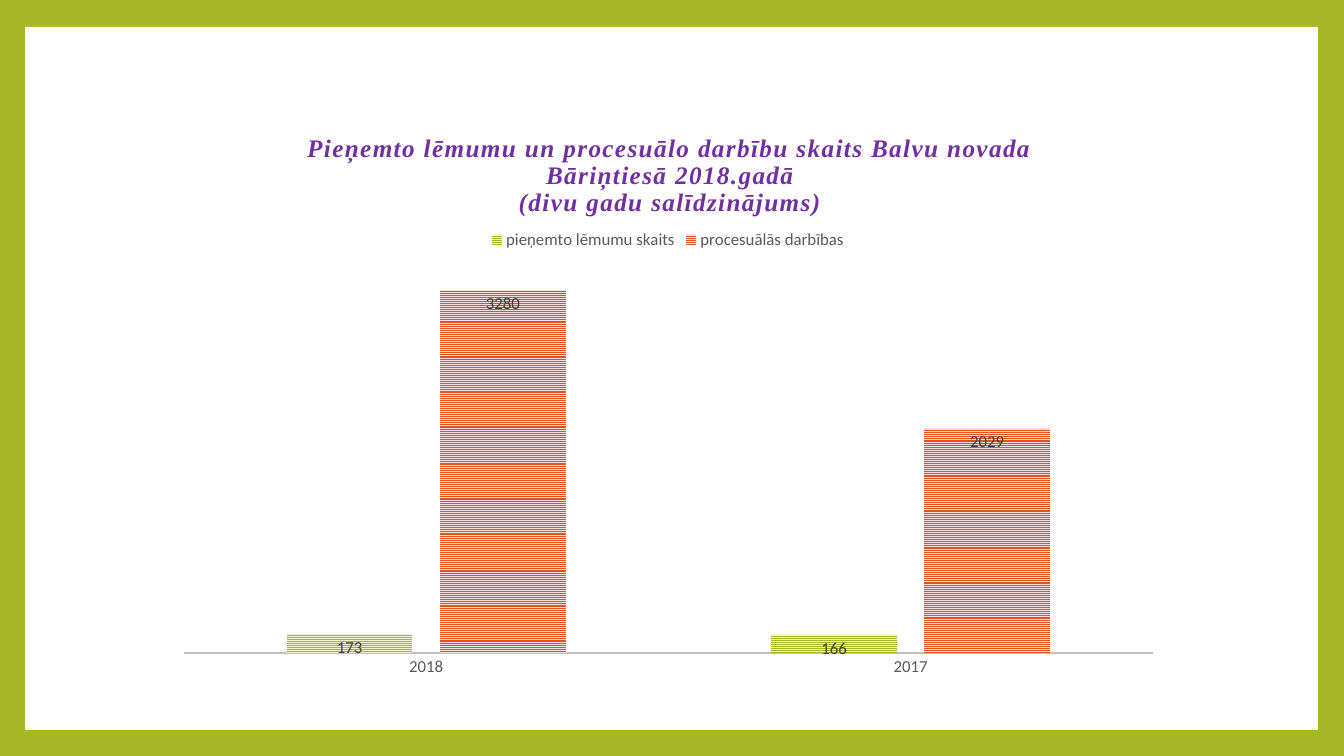
from dataclasses import dataclass

from lxml import etree
from pptx import Presentation
from pptx import util as u
from pptx.chart.chart import Chart
from pptx.chart.data import CategoryChartData
from pptx.dml.color import RGBColor
from pptx.enum import chart as ch, dml, shapes
from pptx.oxml.ns import qn
from pptx.text.text import Font

PX = 9080  # EMU per px


@dataclass(frozen=True)
class Theme:
    green: str = "A6B727"
    white: str = "FFFFFF"
    purple: str = "7030A0"
    axis: str = "BFBFBF"
    grey: str = "595959"
    label: str = "404040"
    body_font: str = "Calibri"
    title_font: str = "Times New Roman"
    body_pt: int = 12
    title_pt: int = 18


@dataclass(frozen=True)
class Box:
    left: int
    top: int
    width: int
    height: int

    def emu(self) -> tuple[int, ...]:
        return tuple(v * PX for v in (self.left, self.top, self.width, self.height))


@dataclass(frozen=True)
class Bars:
    name: str
    values: tuple[int, ...]
    fore: str
    back: str


THEME = Theme()
SLIDE = Box(0, 0, 1343, 755)
PANEL = Box(25, 27, 1292, 702)
CHART = Box(164, 108, 1007, 579)
TITLE = Box(304, 130, 764, 82)
LEGEND = Box(486, 228, 363, 22)
PLOT = Box(184, 265, 968, 387)
YEARS = ("2018", "2017")
TITLE_LINES = (
    "Pieņemto lēmumu un procesuālo darbību skaits Balvu novada Bāriņtiesā 2018.gadā",
    "(divu gadu salīdzinājums)",
)
SERIES = (
    Bars("pieņemto lēmumu skaits", (173, 166), THEME.green, "F0F5D0"),
    Bars("procesuālās darbības", (3280, 2029), "DF5327", "F9DDD4"),
)


def rgb(value: str) -> RGBColor:
    return RGBColor.from_string(value)


def style(font: Font, color: str, name: str = THEME.body_font,
          size: int = THEME.body_pt, strong: bool = False) -> None:
    font.name, font.size = name, u.Pt(size)
    font.bold = font.italic = strong
    font.color.rgb = rgb(color)


def place(element: etree._Element, box: Box, inner: bool = False, sized: bool = True) -> None:
    """Fix a chart part at a slide position, as fractions of the chart."""
    layout = element.find(qn("c:layout"))
    if layout is None:
        layout = etree.Element(qn("c:layout"))
        before = [e for e in element if e.tag in (qn("c:tx"), qn("c:legendPos"))]
        element.insert(len(before), layout)
    for child in list(layout):
        layout.remove(child)
    manual = etree.SubElement(layout, qn("c:manualLayout"))
    settings = {"layoutTarget": "inner"} if inner else {}
    settings |= {"xMode": "edge", "yMode": "edge",
                 "x": (box.left - CHART.left) / CHART.width,
                 "y": (box.top - CHART.top) / CHART.height}
    if sized:
        settings |= {"w": box.width / CHART.width, "h": box.height / CHART.height}
    for tag, value in settings.items():
        text = value if isinstance(value, str) else f"{value:.4f}"
        etree.SubElement(manual, qn(f"c:{tag}")).set("val", text)


def add_title(chart: Chart) -> None:
    title = chart.chart_title
    tf = title.text_frame
    for i, line in enumerate(TITLE_LINES):
        p = tf.paragraphs[0] if i == 0 else tf.add_paragraph()
        p.add_run().text = line
        style(p.font, THEME.purple, THEME.title_font, THEME.title_pt, strong=True)
        p._p.pPr.find(qn("a:defRPr")).set("spc", "100")
    title.include_in_layout = False
    place(title._element, TITLE, sized=False)


def style_axes(chart: Chart) -> None:
    years, counts = chart.category_axis, chart.value_axis
    years.major_tick_mark = years.minor_tick_mark = ch.XL_TICK_MARK.NONE
    years.format.line.color.rgb = rgb(THEME.axis)
    years.format.line.width = u.Pt(1.5)
    style(years.tick_labels.font, THEME.grey)
    counts.minimum_scale, counts.maximum_scale = 0, 3500
    counts.has_major_gridlines = False
    counts.visible = False


def style_bars(chart: Chart) -> None:
    plot = chart.plots[0]
    plot.gap_width, plot.overlap = 164, -22
    plot.vary_by_categories = False
    for series, bars in zip(plot.series, SERIES):
        fill = series.format.fill
        fill.patterned()
        fill.pattern = dml.MSO_PATTERN.NARROW_HORIZONTAL
        fill.fore_color.rgb, fill.back_color.rgb = rgb(bars.fore), rgb(bars.back)
        series.format.line.fill.background()
        series.invert_if_negative = False
        labels = series.data_labels
        labels.show_value = True
        labels.position = ch.XL_LABEL_POSITION.INSIDE_END
        style(labels.font, THEME.label)


def main() -> None:
    prs = Presentation()
    prs.slide_width, prs.slide_height = SLIDE.width * PX, SLIDE.height * PX
    s = prs.slides.add_slide(prs.slide_layouts[6])
    s.background.fill.solid()
    s.background.fill.fore_color.rgb = rgb(THEME.green)

    panel = s.shapes.add_shape(shapes.MSO_SHAPE.RECTANGLE, *PANEL.emu())
    panel.shadow.inherit = False
    panel.fill.solid()
    panel.fill.fore_color.rgb = rgb(THEME.white)
    panel.line.fill.background()

    data = CategoryChartData()
    data.categories = YEARS
    for bars in SERIES:
        data.add_series(bars.name, bars.values)
    chart = s.shapes.add_chart(ch.XL_CHART_TYPE.COLUMN_CLUSTERED, *CHART.emu(), data).chart
    style(chart.font, THEME.grey)
    add_title(chart)
    style_axes(chart)
    style_bars(chart)
    chart.has_legend = True
    legend = chart.legend
    legend.position = ch.XL_LEGEND_POSITION.TOP
    legend.include_in_layout = False
    style(legend.font, THEME.grey)
    place(legend._element, LEGEND)
    place(chart._chartSpace.chart.plotArea, PLOT, inner=True)
    prs.save("out.pptx")


if __name__ == "__main__":
    main()
